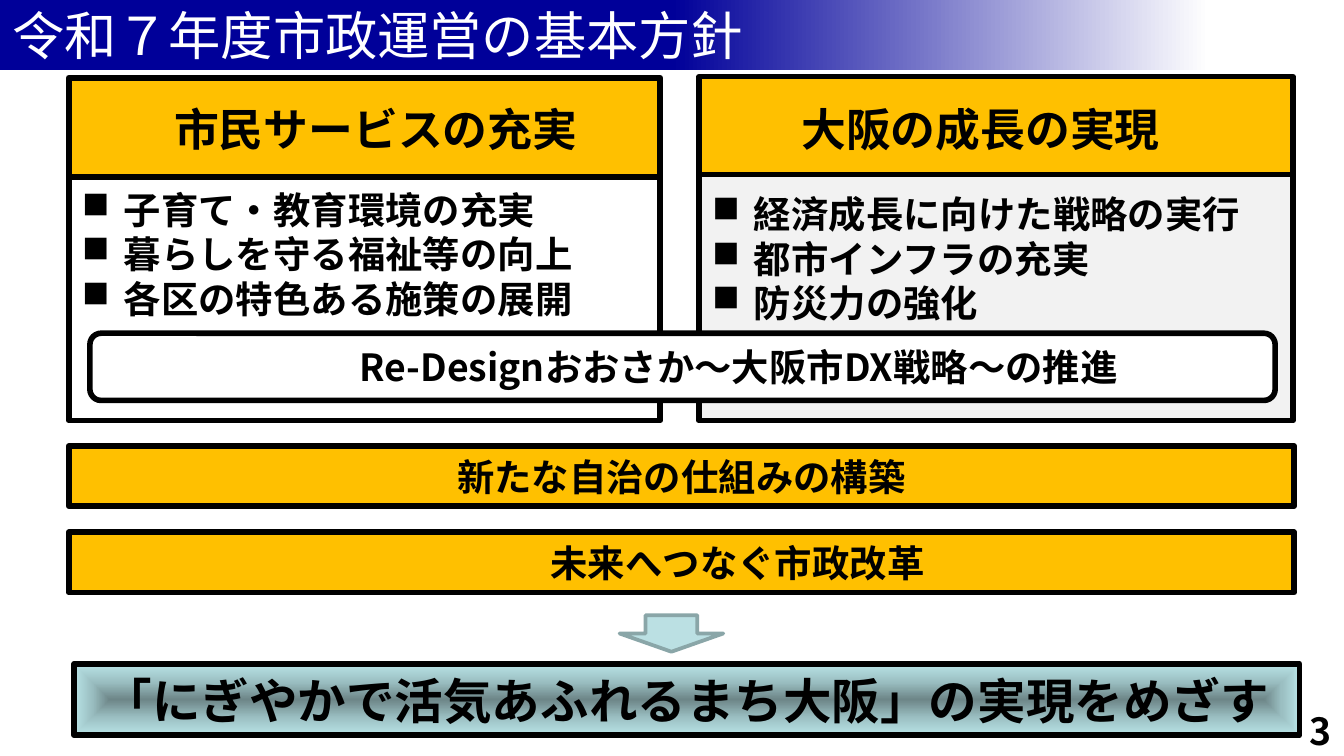
from lxml import etree
from pptx import Presentation
from pptx import oxml
from pptx import util as u
from pptx.dml.color import RGBColor
from pptx.enum import shapes, text
from pptx.oxml.ns import nsdecls, qn

FONT = "Noto Sans CJK JP"
BLACK = RGBColor(0x00, 0x00, 0x00)
WHITE = RGBColor(0xFF, 0xFF, 0xFF)
NAVY = RGBColor(0x00, 0x00, 0x99)
AMBER = RGBColor(0xFF, 0xC0, 0x00)
GREY = RGBColor(0xF2, 0xF2, 0xF2)
AQUA = RGBColor(0xBB, 0xE0, 0xE3)
TEAL = RGBColor(0x8A, 0xA6, 0xA8)
GLOW = [(0, "6D8688"), (50, "9BBFC2"), (100, "B8E3E6")]
RECT = shapes.MSO_SHAPE.RECTANGLE
CENTER, LEFT, RIGHT = text.PP_ALIGN.CENTER, text.PP_ALIGN.LEFT, text.PP_ALIGN.RIGHT
MIDDLE, TOP = text.MSO_ANCHOR.MIDDLE, text.MSO_ANCHOR.TOP

prs = Presentation()
prs.slide_width, prs.slide_height = u.Cm(25.4), u.Cm(14.29)
s = prs.slides.add_slide(prs.slide_layouts[5])


def add_box(kind, at, fill, line=BLACK, width=3):
    sp = s.shapes.add_shape(kind, *map(u.Cm, at))
    sp.shadow.inherit = False
    sp.fill.solid()
    sp.fill.fore_color.rgb = fill
    sp.line.color.rgb = line
    sp.line.width = u.Pt(width)
    return sp


def write(sp, lines, size, align=CENTER, anchor=MIDDLE, color=BLACK, bold=True,
          margins=(0.25, 0.13), wrap=True, indent=0, bullet=None):
    tf = sp.text_frame
    side, edge = map(u.Cm, margins)
    frame = dict(word_wrap=wrap, auto_size=text.MSO_AUTO_SIZE.NONE,
                 vertical_anchor=anchor, margin_left=side + u.Cm(indent),
                 margin_right=side, margin_top=edge, margin_bottom=edge)
    for name, value in frame.items():
        setattr(tf, name, value)
    for i, line in enumerate(lines):
        p = tf.paragraphs[0] if i == 0 else tf.add_paragraph()
        p.alignment = align
        if bullet:
            pPr = p._p.get_or_add_pPr()
            pPr.set("marL", str(u.Cm(0.79)))
            pPr.set("indent", str(-u.Cm(0.79)))
            etree.SubElement(pPr, qn("a:buChar")).set("char", bullet)
        r = p.add_run()
        r.text = line
        for name, value in dict(name=FONT, size=u.Pt(size), bold=bold).items():
            setattr(r.font, name, value)
        r.font.color.rgb = color
        etree.SubElement(r._r.get_or_add_rPr(), qn("a:ea")).set("typeface", FONT)


sp = s.shapes.title
sp.left, sp.top, sp.width, sp.height = map(u.Cm, (0, 0, 25.4, 1.32))
sp.fill.gradient()
sp.fill.gradient_angle = 0
for stop, (position, color) in zip(sp.fill.gradient_stops, [(0.5, NAVY), (0.9, WHITE)]):
    stop.position = position
    stop.color.rgb = color
write(sp, ["令和７年度市政運営の基本方針"], 28, LEFT, color=WHITE, bold=False,
      margins=(0.23, 0.1), wrap=False)

columns = [
    dict(panel=(1.3, 1.52, 11.18, 6.43), fill=WHITE, head=(1.3, 1.47, 11.18, 1.88),
         label=(1.7, 1.8, 10.8, 1.27), heading="市民サービスの充実",
         body=(1.3, 3.4, 11.25, 2.82),
         items=["子育て・教育環境の充実", "暮らしを守る福祉等の向上", "各区の特色ある施策の展開"]),
    dict(panel=(13.21, 1.47, 11.23, 6.48), fill=GREY, head=(13.21, 1.45, 11.23, 1.85),
         label=(13.13, 1.8, 10.8, 1.27), heading="大阪の成長の実現",
         body=(13.21, 3.48, 11.23, 2.82),
         items=["経済成長に向けた戦略の実行", "都市インフラの充実", "防災力の強化"]),
]
for col in columns:
    add_box(RECT, col["panel"], col["fill"])
    add_box(RECT, col["head"], AMBER)
    label = s.shapes.add_textbox(*map(u.Cm, col["label"]))
    write(label, [col["heading"]], 24, anchor=TOP)
    body = s.shapes.add_textbox(*map(u.Cm, col["body"]))
    write(body, col["items"], 20, LEFT, TOP, bullet="■")

bars = [
    (shapes.MSO_SHAPE.ROUNDED_RECTANGLE, (1.7, 6.3, 22.4, 1.27), WHITE,
     "Re-Designおおさか～大阪市DX戦略～の推進", 2.12),
    (RECT, (1.3, 8.43, 23.16, 1.14), AMBER, "新たな自治の仕組みの構築", 0),
    (RECT, (1.3, 10.06, 23.16, 1.14), AMBER, "未来へつなぐ市政改革", 2.12),
]
for kind, at, fill, line, indent in bars:
    write(add_box(kind, at, fill), [line], 20, margins=(0.28, 0.15), indent=indent)

add_box(shapes.MSO_SHAPE.DOWN_ARROW, (11.71, 11.63, 1.96, 0.69), AQUA, TEAL, 2)

goal = add_box(RECT, (1.4, 12.55, 23.16, 1.35), AQUA)
stops = "".join(f'<a:gs pos="{pos * 1000}"><a:srgbClr val="{rgb}"/></a:gs>' for pos, rgb in GLOW)
spPr = goal._element.spPr
spPr.replace(spPr.find(qn("a:solidFill")), oxml.parse_xml(
    f'<a:gradFill {nsdecls("a")} rotWithShape="1"><a:gsLst>{stops}</a:gsLst><a:path path="shape">'
    '<a:fillToRect l="50000" t="50000" r="50000" b="50000"/></a:path></a:gradFill>'))
write(goal, ["「にぎやかで活気あふれるまち大阪」の実現をめざす"], 26)

number = s.shapes.add_textbox(*map(u.Cm, (19.41, 13.28, 5.99, 0.99)))
write(number, ["3"], 20, RIGHT, TOP, margins=(0.23, 0.1))

prs.save("out.pptx")
